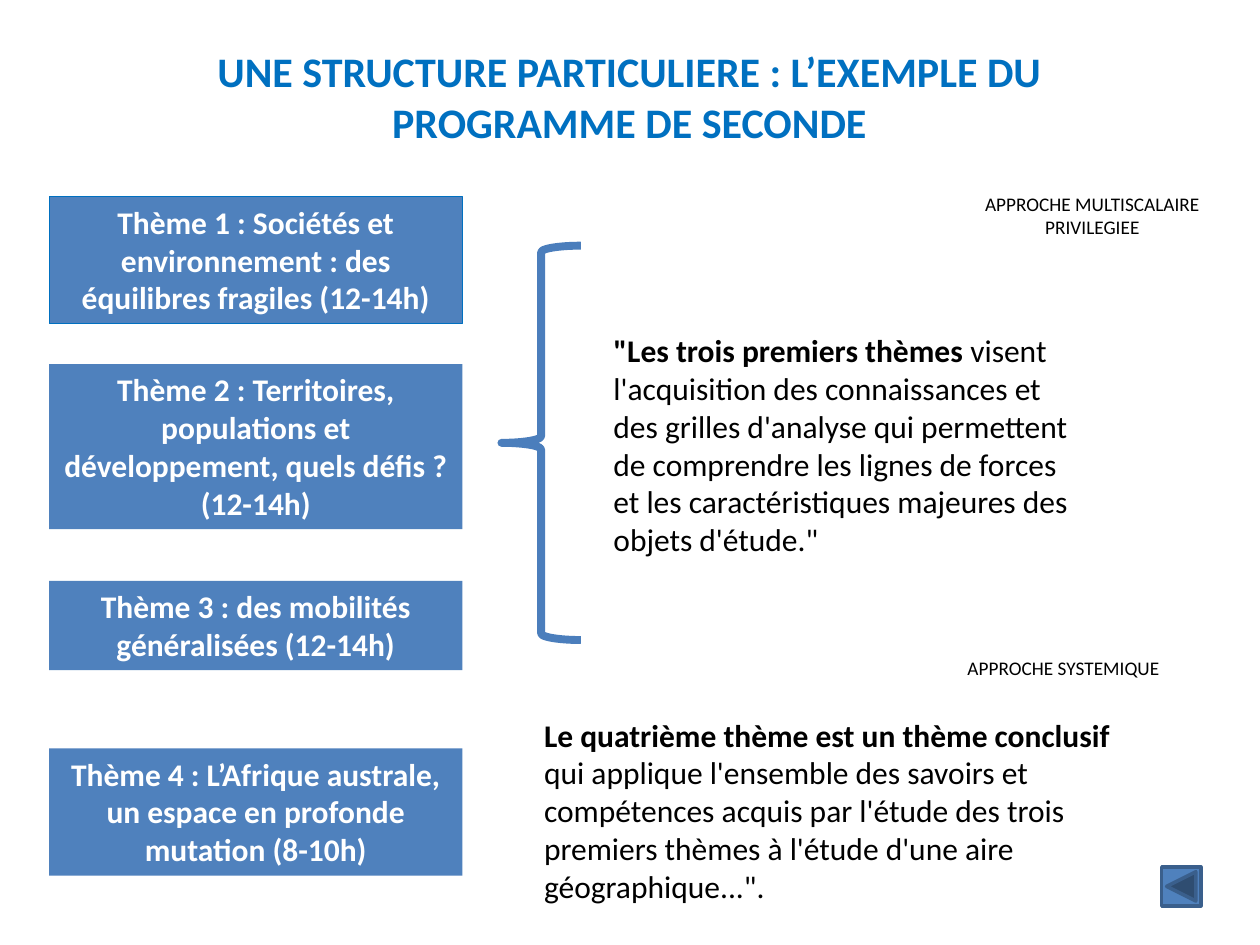
from pptx import Presentation
from pptx.dml.color import RGBColor
from pptx.enum.shapes import MSO_SHAPE
from pptx.enum.text import MSO_ANCHOR, PP_ALIGN
from pptx.util import Inches, Pt

# Content
TITLE = "UNE STRUCTURE PARTICULIERE : L’EXEMPLE DU PROGRAMME DE SECONDE"
# Each theme: text, top, height, outline
THEMES = [
    ("Thème 1 : Sociétés et environnement : des équilibres fragiles (12-14h)", 1.56, 1.01, "0070C0"),
    ("Thème 2 : Territoires, populations et développement, quels défis ? (12-14h)", 2.89, 1.31, None),
    ("Thème 3 : des mobilités généralisées (12-14h)", 4.61, 0.71, None),
    ("Thème 4 : L’Afrique australe, un espace en profonde mutation (8-10h)", 5.94, 1.01, None),
]
# Each note: bold part, plain part, box, size, alignment
NOTES = [
    ("\"Les trois premiers thèmes",
     " visent l'acquisition des connaissances et des grilles d'analyse qui permettent "
     "de comprendre les lignes de forces et les caractéristiques majeures des objets d'étude.\"",
     (4.77, 2.58, 3.91, 1.92), 18, PP_ALIGN.LEFT),
    ("Le quatrième thème est un thème conclusif",
     " qui applique l'ensemble des savoirs et compétences acquis par l'étude des trois "
     "premiers thèmes à l'étude d'une aire géographique...\".",
     (4.22, 5.63, 5, 1.62), 18, PP_ALIGN.LEFT),
    ("", "APPROCHE SYSTEMIQUE", (7.58, 5.16, 1.88, 0.29), 11, PP_ALIGN.LEFT),
    ("", "APPROCHE MULTISCALAIRE PRIVILEGIEE", (7.34, 1.48, 2.66, 0.47), 11, PP_ALIGN.CENTER),
]
BLUE = "4F81BD"


def color(code):
    return RGBColor.from_string(code)


def place(box):
    return [Inches(n) for n in box]


def style(para, size, code, align, bold=None):
    para.alignment = align
    font = para.font
    font.name, font.size, font.bold = "Calibri", Pt(size), bold
    font.color.rgb = color(code)


def draw(kind, box, fill=None, line=None, width=0.75):
    shape = slide.shapes.add_shape(kind, *place(box))
    shape.shadow.inherit = False
    if fill:
        shape.fill.solid()
        shape.fill.fore_color.rgb = color(fill)
    else:
        shape.fill.background()
    if line:
        shape.line.color.rgb = color(line)
        shape.line.width = Pt(width)
    else:
        shape.line.fill.background()
    return shape


prs = Presentation()
prs.slide_width, prs.slide_height = Inches(10), Inches(7.5)
slide = prs.slides.add_slide(prs.slide_layouts[5])

# Title
title = slide.shapes.title
title.left, title.top, title.width, title.height = place((1.09, 0.31, 7.81, 0.91))
title.text_frame.text = TITLE
style(title.text_frame.paragraphs[0], 24, "0070C0", PP_ALIGN.CENTER, True)

# Themes
for text, top, height, line in THEMES:
    frame = draw(MSO_SHAPE.RECTANGLE, (0.39, top, 3.28, height), BLUE, line).text_frame
    frame.word_wrap = True
    frame.vertical_anchor = MSO_ANCHOR.TOP
    frame.text = text
    style(frame.paragraphs[0], 18, "FFFFFF", PP_ALIGN.CENTER, True)

# Brace and back button
draw(MSO_SHAPE.LEFT_BRACE, (3.98, 1.95, 0.63, 3.13), line="4B7EBC", width=4.5)
draw(MSO_SHAPE.ACTION_BUTTON_BACK_OR_PREVIOUS, (9.22, 6.88, 0.31, 0.31), BLUE, "3A5F8C", 2)

# Notes
for lead, rest, box, size, align in NOTES:
    frame = slide.shapes.add_textbox(*place(box)).text_frame
    frame.word_wrap = True
    para = frame.paragraphs[0]
    style(para, size, "000000", align)
    if lead:
        run = para.add_run()
        run.text = lead
        run.font.bold = True
    para.add_run().text = rest

prs.save("out.pptx")
